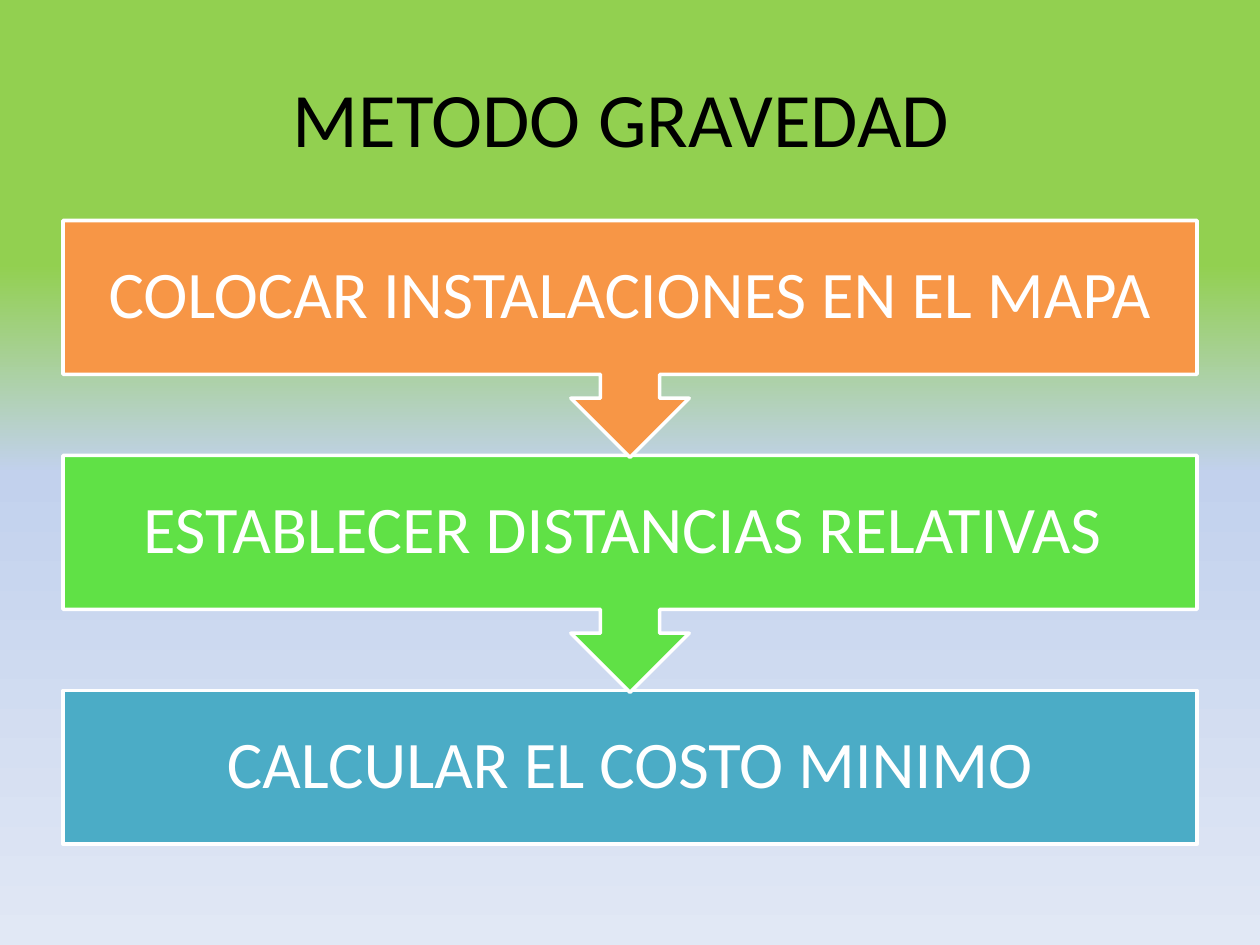
from copy import deepcopy

from pptx import Presentation
from pptx.dml.color import RGBColor
from pptx.enum.shapes import MSO_SHAPE as Shape
from pptx.enum.text import MSO_ANCHOR as Anchor, PP_ALIGN as Align
from pptx.oxml.ns import qn
from pptx.util import Inches, Pt

WIDTH, HEIGHT = 10, 7.5
LEFT, SPAN = 0.05, 0.9            # shares of the slide width
TOP, PITCH = 1.75 / HEIGHT, 1.865 / HEIGHT
BOX, CALLOUT = 1.22 / HEIGHT, 1.88 / HEIGHT

STEPS = [
    ("COLOCAR INSTALACIONES EN EL MAPA", "F79646"),
    ("ESTABLECER DISTANCIAS RELATIVAS ", "60E146"),
    ("CALCULAR EL COSTO MINIMO", "4BACC6"),
]


def rgb(value):
    return RGBColor.from_string(value)


class Deck:
    """Holds the style and the current slide; places by shares of its size."""
    font, ink, light = "Calibri", "000000", "FFFFFF"

    def __init__(self):
        self.prs = Presentation()
        self.prs.slide_width, self.prs.slide_height = Inches(WIDTH), Inches(HEIGHT)
        self.s = self.prs.slides.add_slide(self.prs.slide_layouts[5])

    def area(self, y, h):
        return [Inches(v) for v in (LEFT * WIDTH, y * HEIGHT, SPAN * WIDTH, h * HEIGHT)]

    def background(self, stops):
        fill = self.s.background.fill
        fill.gradient()
        fill.gradient_angle = 270
        gs_list = self.s.element.find(".//" + qn("a:gsLst"))
        while len(gs_list) < len(stops):
            gs_list.append(deepcopy(gs_list[-1]))
        for stop, (position, color) in zip(fill.gradient_stops, stops):
            stop.position = position
            stop.color.rgb = rgb(color)

    def set_text(self, tf, text, size, color):
        tf.text = text
        tf.word_wrap = True
        tf.vertical_anchor = Anchor.MIDDLE
        p = tf.paragraphs[0]
        p.alignment = Align.CENTER
        font = p.runs[0].font
        font.name, font.size, font.color.rgb = self.font, Pt(size), rgb(color)
        return p

    def title(self, text, y, h):
        sp = self.s.shapes.title
        sp.left, sp.top, sp.width, sp.height = self.area(y, h)
        self.set_text(sp.text_frame, text, 44, self.ink)

    def block(self, kind, y, h, color, rotation=0):
        sp = self.s.shapes.add_shape(kind, *self.area(y, h))
        sp.rotation = rotation
        sp.shadow.inherit = False
        sp.fill.solid()
        sp.fill.fore_color.rgb = rgb(color)
        sp.line.color.rgb = rgb(self.light)
        sp.line.width = Pt(2)

    def label(self, text, y, h):
        tf = self.s.shapes.add_textbox(*self.area(y, h)).text_frame
        tf.margin_left = tf.margin_right = tf.margin_top = tf.margin_bottom = Inches(0.3)
        self.set_text(tf, text, 38, self.light).line_spacing = 0.9


def main():
    deck = Deck()
    deck.background([(0.28, "92D050"), (0.5, "C2D1ED"), (1, "E1E8F5")])
    deck.title("METODO GRAVEDAD ", 0.04, 1.25 / HEIGHT)

    # Steps from the bottom up, so each arrow tip lies over the next box
    last = len(STEPS) - 1
    for i, (text, color) in reversed(list(enumerate(STEPS))):
        y = TOP + i * PITCH
        if i == last:
            deck.block(Shape.RECTANGLE, y, BOX, color)
        else:
            deck.block(Shape.UP_ARROW_CALLOUT, y, CALLOUT, color, rotation=180)
        deck.label(text, y, BOX)

    deck.prs.save("out.pptx")


if __name__ == "__main__":
    main()
